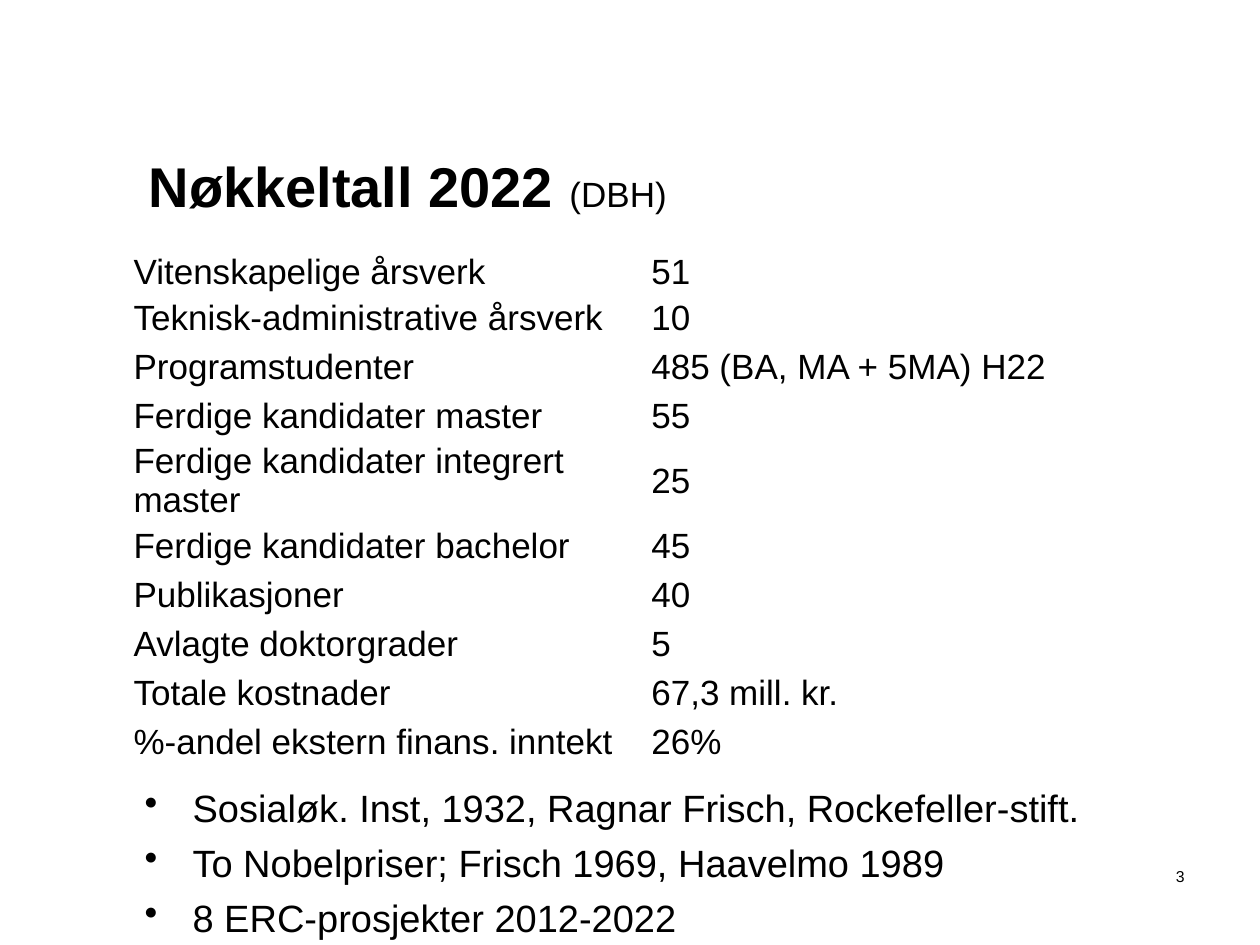
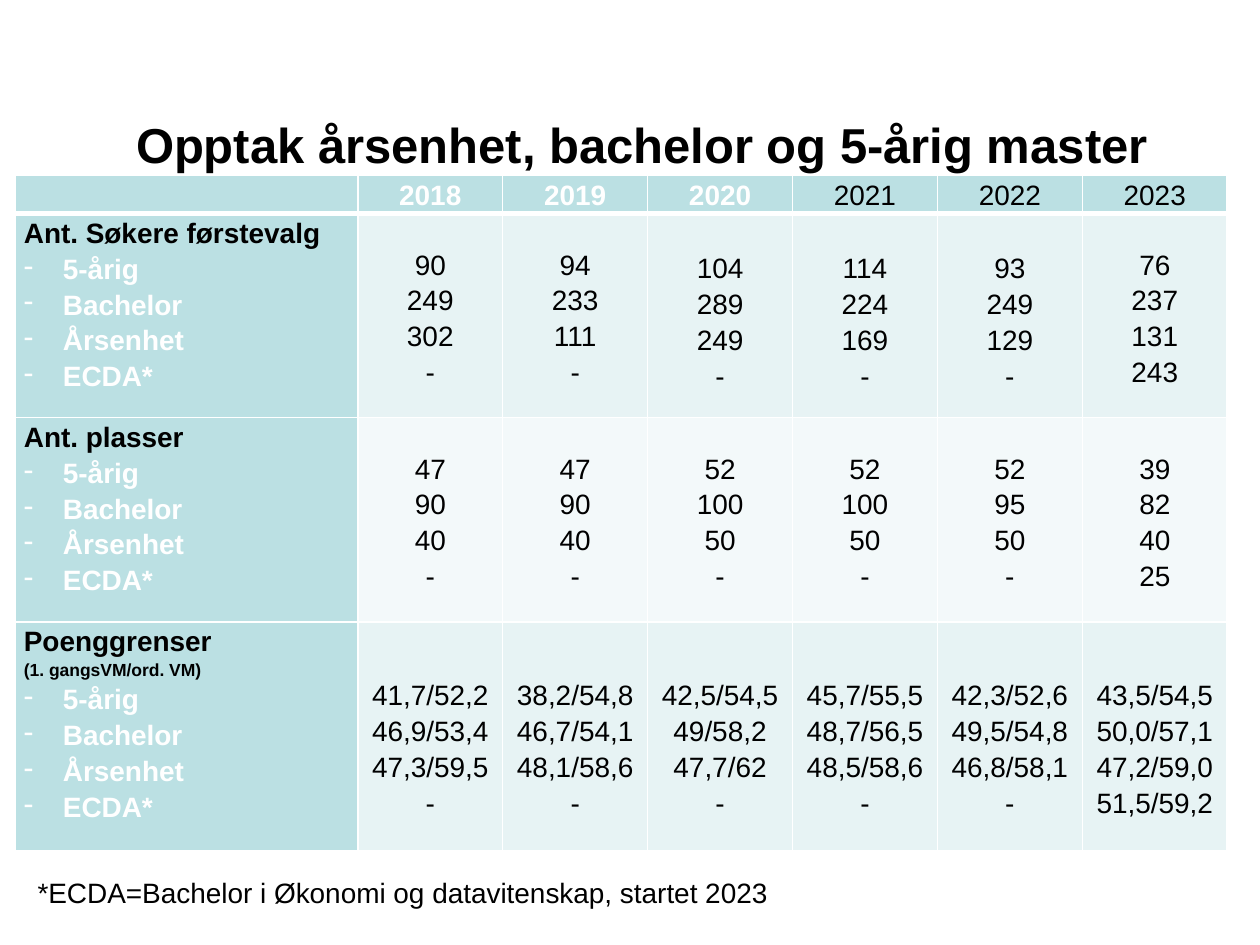
import dataclasses
import typing

import lxml.etree
import pptx
import pptx.dml.color
import pptx.enum.text
import pptx.oxml.ns
import pptx.util

Inches = pptx.util.Inches
Pt = pptx.util.Pt
Align = pptx.enum.text.PP_ALIGN
Anchor = pptx.enum.text.MSO_ANCHOR


@dataclasses.dataclass(frozen=True)
class Theme:
    font: str = "Arial"
    black: str = "000000"
    white: str = "FFFFFF"
    teal: str = "BBE0E3"
    band_dark: str = "E7F3F4"
    band_light: str = "F3F9FA"
    key_title: float = 32
    intake_title: float = 28
    key_text: float = 20
    list_text: float = 21.7
    intake_text: float = 16
    note: float = 10
    number: float = 9
    line_spacing: float = 1.15


THEME = Theme()


@dataclasses.dataclass(frozen=True)
class Span:
    text: str
    size: float
    color: str = THEME.black
    bold: bool = False


@dataclasses.dataclass(frozen=True)
class Line:
    spans: tuple[Span, ...]
    bullet: str = ""
    indent: float = 0
    formats: dict[str, typing.Any] = dataclasses.field(default_factory=dict)


@dataclasses.dataclass(frozen=True)
class Area:
    left: float
    top: float
    width: float
    height: float

    def lengths(self) -> tuple[int, ...]:
        return tuple(Inches(value) for value in dataclasses.astuple(self))


@dataclasses.dataclass(frozen=True)
class Section:
    """One group of intake figures, with a row of yearly values per programme."""
    title: str
    fill: str
    height: float
    value_tops: tuple[float, ...]
    rows: tuple[str, ...]
    note: str = ""


KEY_FIGURES = (
    ("Vitenskapelige årsverk", "51"),
    ("Teknisk-administrative årsverk", "10"),
    ("Programstudenter", "485 (BA, MA + 5MA) H22"),
    ("Ferdige kandidater master", "55"),
    ("Ferdige kandidater integrert master", "25"),
    ("Ferdige kandidater bachelor", "45"),
    ("Publikasjoner", "40"),
    ("Avlagte doktorgrader", "5"),
    ("Totale kostnader", "67,3 mill. kr."),
    ("%-andel ekstern finans. inntekt", "26%"),
)
HIGHLIGHTS = (
    "Sosialøk. Inst, 1932, Ragnar Frisch, Rockefeller-stift.",
    "To Nobelpriser; Frisch 1969, Haavelmo 1989",
    "8 ERC-prosjekter 2012-2022",
)
YEARS = ("2018", "2019", "2020", "2021", "2022", "2023")
WHITE_YEARS = YEARS[:3]
PROGRAMMES = ("5-årig", "Bachelor", "Årsenhet", "ECDA*")
SECTIONS = (
    Section("Ant. Søkere førstevalg", THEME.band_dark, 1.62,
            (0.25, 0.25, 0.28, 0.28, 0.28, 0.25),
            ("90 94 104 114 93 76", "249 233 289 224 249 237",
             "302 111 249 169 129 131", "- - - - - 243")),
    Section("Ant. plasser", THEME.band_light, 1.62, (0.25,) * len(YEARS),
            ("47 47 52 52 52 39", "90 90 100 100 95 82",
             "40 40 50 50 50 40", "- - - - - 25")),
    Section("Poenggrenser", THEME.band_dark, 1.82, (0.43,) * len(YEARS),
            ("41,7/52,2 38,2/54,8 42,5/54,5 45,7/55,5 42,3/52,6 43,5/54,5",
             "46,9/53,4 46,7/54,1 49/58,2 48,7/56,5 49,5/54,8 50,0/57,1",
             "47,3/59,5 48,1/58,6 47,7/62 48,5/58,6 46,8/58,1 47,2/59,0",
             "- - - - - 51,5/59,2"),
            "(1. gangsVM/ord. VM)"),
)


def apply(target: typing.Any, formats: dict[str, typing.Any]) -> None:
    for name, value in formats.items():
        setattr(target, name, value)


def rgb(color: str) -> pptx.dml.color.RGBColor:
    return pptx.dml.color.RGBColor.from_string(color)


def add_element(parent: typing.Any, tag: str, **attributes: str) -> typing.Any:
    return lxml.etree.SubElement(parent, pptx.oxml.ns.qn(tag), attributes)


def write(frame: typing.Any, lines: typing.Sequence[Line]) -> None:
    for index, line in enumerate(lines):
        para = frame.add_paragraph() if index else frame.paragraphs[0]
        if line.bullet:
            properties = para._p.get_or_add_pPr()
            properties.set("marL", str(Inches(line.indent)))
            properties.set("indent", str(-Inches(line.indent)))
            add_element(properties, "a:buChar", char=line.bullet)
        apply(para, line.formats)
        for span in line.spans:
            run = para.add_run()
            run.text = span.text
            apply(run.font, {"name": THEME.font, "size": Pt(span.size), "bold": span.bold})
            run.font.color.rgb = rgb(span.color)


def add_page(deck: typing.Any, area: Area, *spans: Span) -> typing.Any:
    """Add a title-only slide and format its title."""
    page = deck.slides.add_slide(deck.slide_layouts[5])
    title = page.shapes.title
    apply(title, dict(zip(("left", "top", "width", "height"), area.lengths())))
    apply(title.text_frame, {"vertical_anchor": Anchor.MIDDLE, "word_wrap": True})
    write(title.text_frame, [Line(spans, formats={"alignment": Align.LEFT})])
    return page


def add_text(page: typing.Any, area: Area, lines: typing.Sequence[Line],
             **formats: typing.Any) -> None:
    frame = page.shapes.add_textbox(*area.lengths()).text_frame
    apply(frame, {"word_wrap": True, **formats})
    write(frame, lines)


def add_grid(page: typing.Any, area: Area, widths: typing.Sequence[float],
             heights: typing.Sequence[float]) -> typing.Any:
    table = page.shapes.add_table(len(heights), len(widths), *area.lengths()).table
    apply(table, {"first_row": False, "horz_banding": False})
    for column, width in zip(table.columns, widths):
        column.width = Inches(width)
    for row, height in zip(table.rows, heights):
        row.height = Inches(height)
    return table


def set_margins(cell: typing.Any, side: float, top: float, bottom: float) -> None:
    apply(cell, {"margin_left": Inches(side), "margin_right": Inches(side),
                 "margin_top": Inches(top), "margin_bottom": Inches(bottom)})


def set_borders(cell: typing.Any, top: float, bottom: float) -> None:
    properties = cell._tc.get_or_add_tcPr()
    sides = {"a:lnL": 1, "a:lnR": 1, "a:lnT": top, "a:lnB": bottom}
    for tag, width in sides.items():
        border = add_element(properties, tag, w=str(Pt(width)))
        add_element(add_element(border, "a:solidFill"), "a:srgbClr", val=THEME.white)


def fill_intake_cell(cell: typing.Any, fill: str, lines: typing.Sequence[Line],
                     margin_top: float = 0, border_top: float = 1,
                     border_bottom: float = 1) -> None:
    set_borders(cell, border_top, border_bottom)
    set_margins(cell, 0.07, margin_top, 0)
    cell.fill.solid()
    cell.fill.fore_color.rgb = rgb(fill)
    write(cell.text_frame, lines)


def intake_line(text: str, color: str = THEME.black, bold: bool = False,
                size: float = THEME.intake_text, bullet: str = "",
                alignment: typing.Any = Align.LEFT) -> Line:
    return Line((Span(text, size, color, bold),), bullet, 0.31,
                {"line_spacing": THEME.line_spacing, "alignment": alignment})


def section_labels(section: Section) -> list[Line]:
    lines = [intake_line(section.title, bold=True)]
    if section.note:
        lines.append(intake_line(section.note, bold=True, size=THEME.note))
    return lines + [intake_line(name, THEME.white, True, bullet="-") for name in PROGRAMMES]


def build_key_figures(deck: typing.Any) -> None:
    page = add_page(deck, Area(1.08, 0.84, 8.42, 1.25),
                    Span("Nøkkeltall 2022 ", THEME.key_title, bold=True),
                    Span("(DBH)", THEME.key_text))
    heights = [0.31] + [0.39] * (len(KEY_FIGURES) - 1)
    table = add_grid(page, Area(1.05, 2, 8.25, 3.85), (4.11, 4.14), heights)
    for row, figures in zip(table.rows, KEY_FIGURES):
        for cell, text in zip(row.cells, figures):
            set_margins(cell, 0.01, 0.01, 0.01)
            cell.vertical_anchor = Anchor.MIDDLE
            cell.fill.background()
            write(cell.text_frame, [Line((Span(text, THEME.key_text),))])
    add_text(page, Area(8.75, 6.83, 0.75, 0.5),
             [Line((Span("3", THEME.number),), formats={"alignment": Align.RIGHT})])
    add_text(page, Area(1.05, 6.15, 8.42, 1.18),
             [Line((Span(text, THEME.list_text),), "•", 0.38,
                   {"space_before": Pt(5.3 if index else 0)})
              for index, text in enumerate(HIGHLIGHTS)],
             margin_top=Inches(0.08))


def build_intake(deck: typing.Any) -> None:
    page = add_page(deck, Area(0.98, 0.52, 8.42, 1.25),
                    Span("Opptak årsenhet, bachelor og 5-årig master",
                         THEME.intake_title, bold=True))
    table = add_grid(page, Area(0.12, 1.39, 9.61, 5.35),
                     [2.72] + [1.15] * len(YEARS),
                     [0.3] + [section.height for section in SECTIONS])
    fill_intake_cell(table.cell(0, 0), THEME.teal, [], border_bottom=3)
    for column, year in enumerate(YEARS, 1):
        white = year in WHITE_YEARS
        line = intake_line(year, THEME.white if white else THEME.black, white,
                           alignment=Align.CENTER)
        fill_intake_cell(table.cell(0, column), THEME.teal, [line], border_bottom=3)
    for row, section in enumerate(SECTIONS, 1):
        border_top = 3 if row == 1 else 1
        fill_intake_cell(table.cell(row, 0), THEME.teal, section_labels(section),
                         border_top=border_top)
        yearly_values = zip(*(values.split() for values in section.rows))
        for column, (values, top) in enumerate(zip(yearly_values, section.value_tops), 1):
            fill_intake_cell(table.cell(row, column), section.fill,
                             [intake_line(value, alignment=Align.CENTER) for value in values],
                             top, border_top)
    add_text(page, Area(0.2, 6.9, 9.37, 0.37),
             [Line((Span("*ECDA=Bachelor i Økonomi og datavitenskap, startet 2023",
                         THEME.intake_text),))])


def main() -> None:
    deck = pptx.Presentation()
    apply(deck, {"slide_width": Inches(10), "slide_height": Inches(7.5)})
    build_key_figures(deck)
    build_intake(deck)
    deck.save("out.pptx")


if __name__ == "__main__":
    main()
